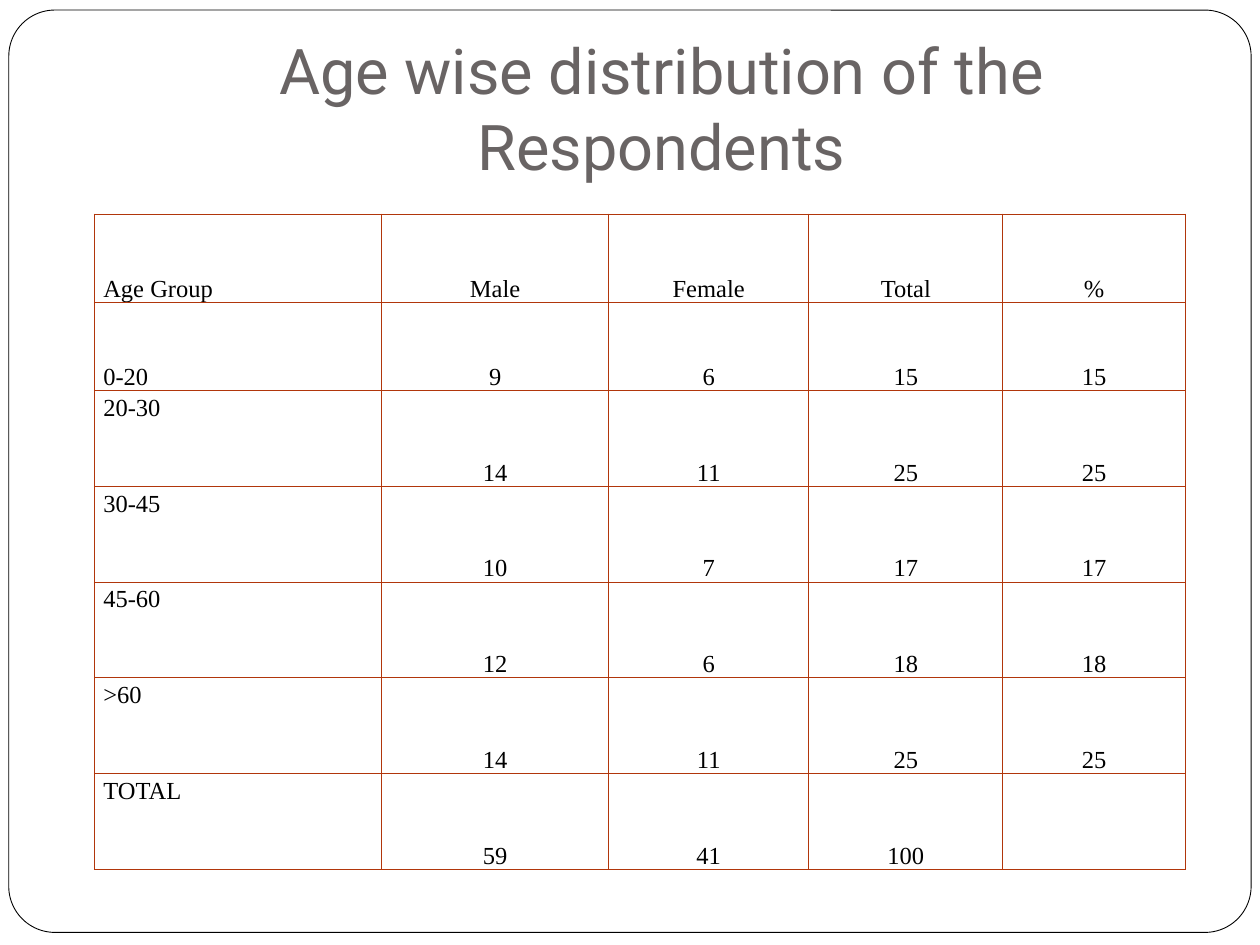
from lxml import etree
from pptx import Presentation
from pptx.dml.color import RGBColor
from pptx.enum import shapes, text
from pptx.oxml import ns
from pptx.util import Inches, Pt

BLACK = RGBColor(0x00, 0x00, 0x00)
WHITE = RGBColor(0xFF, 0xFF, 0xFF)
GREY = RGBColor(0x69, 0x64, 0x64)
RUST = RGBColor(0xB1, 0x36, 0x0B)

ROWS = [
    ("Age Group", "Male", "Female", "Total", "%"),
    ("0-20", "9", "6", "15", "15"),
    ("20-30", "14", "11", "25", "25"),
    ("30-45", "10", "7", "17", "17"),
    ("45-60", "12", "6", "18", "18"),
    (">60", "14", "11", "25", "25"),
    ("TOTAL", "59", "41", "100", ""),
]
COLUMN_WIDTHS = [2.28, 1.8, 1.59, 1.54, 1.45]
ROW_HEIGHTS = [0.7] * 2 + [0.76] * 5


def add_borders(cell, color, width):
    properties = cell._tc.get_or_add_tcPr()
    for position, side in enumerate(("lnL", "lnR", "lnT", "lnB")):
        line = etree.Element(ns.qn(f"a:{side}"), w=str(width))
        fill = etree.SubElement(line, ns.qn("a:solidFill"))
        etree.SubElement(fill, ns.qn("a:srgbClr"), val=str(color))
        properties.insert(position, line)


presentation = Presentation()
presentation.slide_width = Inches(10)
presentation.slide_height = Inches(7.5)
slide = presentation.slides.add_slide(presentation.slide_layouts[5])

# Rounded page frame, behind everything else
frame = slide.shapes.add_shape(
    shapes.MSO_SHAPE.ROUNDED_RECTANGLE,
    Inches(0.07), Inches(0.08), Inches(9.86), Inches(7.32))
frame.adjustments[0] = 0.05
frame.shadow.inherit = False
frame.fill.solid()
frame.fill.fore_color.rgb = WHITE
frame.line.color.rgb = BLACK
frame.line.width = Pt(0.5)
slide.shapes._spTree.insert(2, frame._element)

# Title
title = slide.shapes.title
title.left, title.top = Inches(1), Inches(0.3)
title.width, title.height = Inches(8.5), Inches(1.25)
title_frame = title.text_frame
title_frame.text = "Age wise distribution of the Respondents"
title_frame.auto_size = text.MSO_AUTO_SIZE.NONE
title_frame.vertical_anchor = text.MSO_ANCHOR.BOTTOM
title_frame.margin_bottom = Inches(0.1)
paragraph = title_frame.paragraphs[0]
paragraph.alignment = text.PP_ALIGN.CENTER
paragraph.font.name = "Roboto"
paragraph.font.size = Pt(36)
paragraph.font.color.rgb = GREY

# Table of respondents
table = slide.shapes.add_table(
    len(ROWS), len(COLUMN_WIDTHS), Inches(0.75), Inches(1.7),
    Inches(sum(COLUMN_WIDTHS)), Inches(sum(ROW_HEIGHTS))).table
table.first_row = False
table.horz_banding = False
for column, width in zip(table.columns, COLUMN_WIDTHS):
    column.width = Inches(width)
for row, height in zip(table.rows, ROW_HEIGHTS):
    row.height = Inches(height)

for row_index, values in enumerate(ROWS):
    for column_index, value in enumerate(values):
        cell = table.cell(row_index, column_index)
        cell.text = value
        cell.margin_left = cell.margin_right = Inches(0.07)
        cell.margin_top = cell.margin_bottom = 0
        cell.fill.background()
        add_borders(cell, RUST, Pt(0.75))

        paragraph = cell.text_frame.paragraphs[0]
        paragraph.line_spacing = 1.15
        paragraph.font.name = "Times New Roman"
        paragraph.font.size = Pt(14)
        paragraph.font.color.rgb = BLACK

        cell.vertical_anchor = text.MSO_ANCHOR.BOTTOM
        if column_index > 0:
            paragraph.alignment = text.PP_ALIGN.CENTER
        elif row_index < 2:
            paragraph.alignment = text.PP_ALIGN.LEFT
        else:
            paragraph.alignment = text.PP_ALIGN.JUSTIFY
            cell.vertical_anchor = text.MSO_ANCHOR.TOP

presentation.save("out.pptx")
